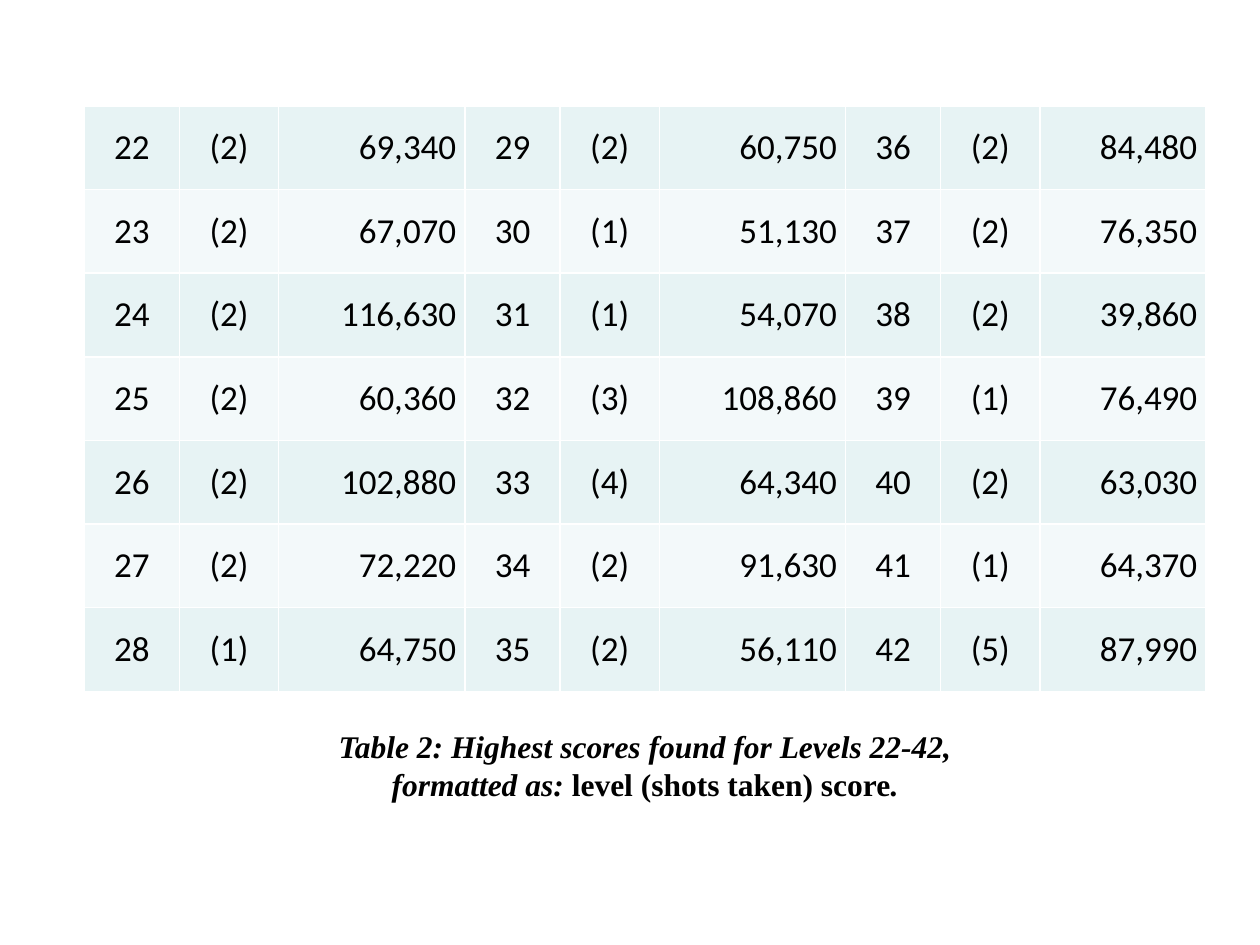
from dataclasses import dataclass

from lxml import etree
from pptx import Presentation
from pptx import util as u
from pptx.dml import color
from pptx.enum import text
from pptx.oxml import ns


@dataclass(frozen=True)
class Theme:
    ink: str = "000000"
    border: str = "FFFFFF"
    bands: tuple = ("E7F3F4", "F3F9FA")
    table_font: str = "Calibri"
    caption_font: str = "Times New Roman"
    table_size: int = 20
    caption_size: int = 18
    border_width: int = 1


class Slide:
    def __init__(self, page, theme):
        self.page = page
        self.theme = theme

    def span(self, para, words, font, size, bold=False, italic=False):
        span = para.add_run()
        span.text = words
        span.font.name = font
        span.font.size = u.Pt(size)
        span.font.bold = bold
        span.font.italic = italic
        span.font.color.rgb = color.RGBColor.from_string(self.theme.ink)

    def caption(self, left, top, width, height, lines):
        box = self.page.shapes.add_textbox(*map(u.Pt, (left, top, width, height)))
        frame = box.text_frame
        frame.word_wrap = True
        frame.auto_size = text.MSO_AUTO_SIZE.SHAPE_TO_FIT_TEXT
        para = frame.paragraphs[0]
        para.alignment = text.PP_ALIGN.CENTER
        para.space_before = u.Pt(12)
        para.space_after = u.Pt(6)
        for index, line in enumerate(lines):
            if index:
                para.add_line_break()
            for words, italic in line:
                self.span(para, words, self.theme.caption_font,
                          self.theme.caption_size, True, italic)

    def borders(self, cell):
        properties = cell._tc.get_or_add_tcPr()
        for index, side in enumerate(("lnL", "lnR", "lnT", "lnB")):
            line = etree.Element(ns.qn(f"a:{side}"), w=str(u.Pt(self.theme.border_width)))
            fill = etree.SubElement(line, ns.qn("a:solidFill"))
            etree.SubElement(fill, ns.qn("a:srgbClr"), val=self.theme.border)
            properties.insert(index, line)

    def cell(self, cell, words, align, fill):
        cell.fill.solid()
        cell.fill.fore_color.rgb = color.RGBColor.from_string(fill)
        cell.vertical_anchor = text.MSO_ANCHOR.MIDDLE
        cell.margin_left = cell.margin_right = u.Pt(5)
        cell.margin_top = cell.margin_bottom = 0
        para = cell.text_frame.paragraphs[0]
        para.alignment = align
        self.span(para, words, self.theme.table_font, self.theme.table_size)
        self.borders(cell)

    def table(self, left, top, widths, row_height, rows, aligns):
        frame = self.page.shapes.add_table(
            len(rows), len(widths), u.Pt(left), u.Pt(top),
            u.Pt(sum(widths)), u.Pt(row_height * len(rows)))
        table = frame.table
        table.first_row = table.horz_banding = False
        for column, width in zip(table.columns, widths):
            column.width = u.Pt(width)
        for index, (row, values) in enumerate(zip(table.rows, rows)):
            row.height = u.Pt(row_height)
            fill = self.theme.bands[index % len(self.theme.bands)]
            for cell, words, align in zip(row.cells, values, aligns):
                self.cell(cell, words, align, fill)


FIRST_LEVEL = 22
ROW_COUNT = 7
RESULTS = [
    (2, 69340), (2, 67070), (2, 116630), (2, 60360), (2, 102880), (2, 72220), (1, 64750),
    (2, 60750), (1, 51130), (1, 54070), (3, 108860), (4, 64340), (2, 91630), (2, 56110),
    (2, 84480), (2, 76350), (2, 39860), (1, 76490), (2, 63030), (1, 64370), (5, 87990),
]


def score_rows():
    entries = [(str(level), f"({shots})", f"{score:,}")
               for level, (shots, score) in enumerate(RESULTS, FIRST_LEVEL)]
    return [sum(entries[row::ROW_COUNT], ()) for row in range(ROW_COUNT)]


def main():
    deck = Presentation()
    deck.slide_width, deck.slide_height = u.Pt(720), u.Pt(540)
    slide = Slide(deck.slides.add_slide(deck.slide_layouts[6]), Theme())
    slide.caption(184.3, 411.8, 368.6, 53.3, [
        [("Table 2: Highest scores found for Levels 22-42,", True)],
        [("formatted as: ", True), ("level (shots taken) score", False), (".", True)],
    ])
    center, right = text.PP_ALIGN.CENTER, text.PP_ALIGN.RIGHT
    slide.table(48.3, 60.5, [54.3, 56.7, 106.5] * 2 + [54.3, 56.7, 95], 47.8,
                score_rows(), [center, center, right] * 3)
    deck.save("out.pptx")


if __name__ == "__main__":
    main()
